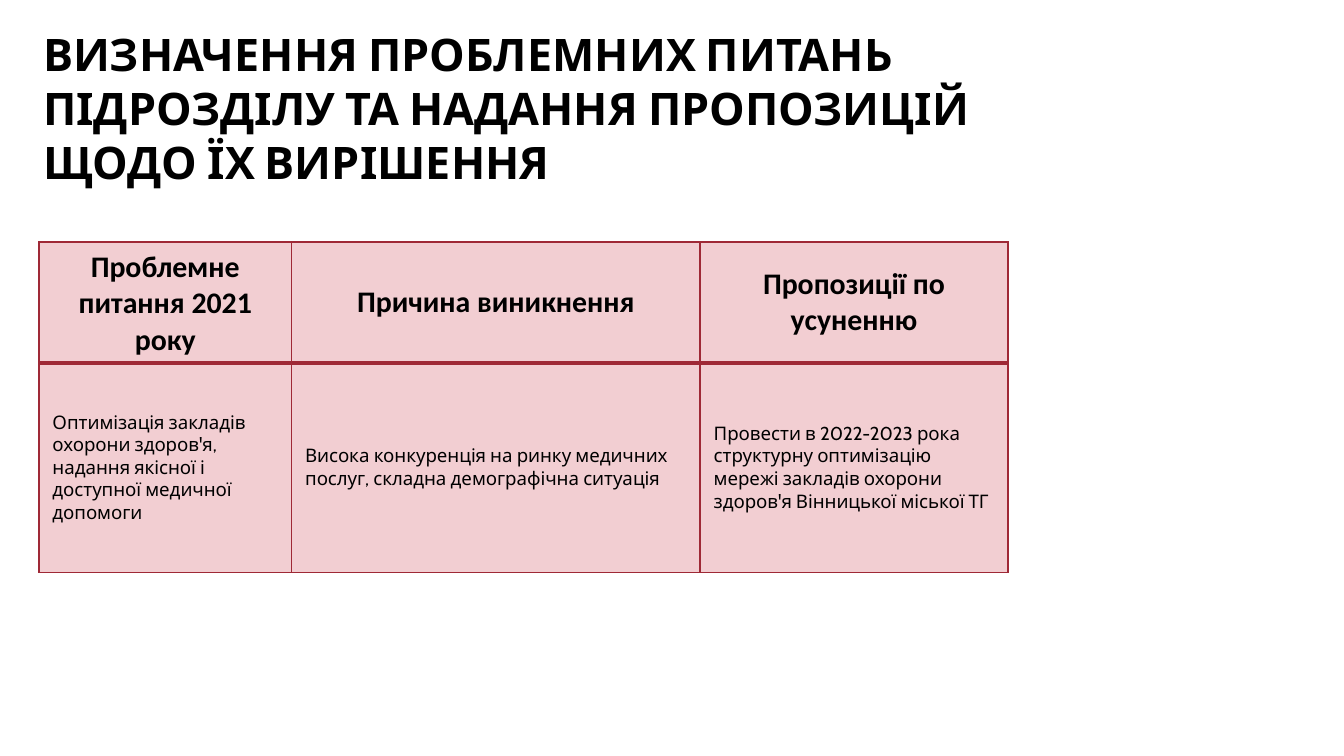
"""Build a slide with a table of a department's problems, causes and proposals."""
from lxml import etree
from pptx import Presentation
from pptx import util as u
from pptx.dml.color import RGBColor
from pptx.enum import text
from pptx.oxml.ns import qn

TITLE = "ВИЗНАЧЕННЯ ПРОБЛЕМНИХ ПИТАНЬ ПІДРОЗДІЛУ ТА НАДАННЯ ПРОПОЗИЦІЙ ЩОДО ЇХ ВИРІШЕННЯ"
ROWS = [
    ["Проблемне питання 2021 року", "Причина виникнення", "Пропозиції по усуненню"],
    [
        "Оптимізація закладів охорони здоров'я, надання якісної і доступної медичної допомоги",
        "Висока конкуренція на ринку медичних послуг, складна демографічна ситуація",
        "Провести в 2022-2023 рока структурну оптимізацію мережі закладів охорони "
        "здоров'я Вінницької міської ТГ",
    ],
]
COLORS = {"text": "000000", "fill": "F2CED2", "border": "9F2936"}
SLIDE_WIDTH = 10
SLIDE_HEIGHT = SLIDE_WIDTH * 9 / 16
TITLE_BOX = {"left": 0.22, "top": 0.15, "width": 7.35, "height": 1.31}
TABLE_LEFT, TABLE_TOP = 0.29, 1.8
COLUMN_WIDTHS = [1.88, 3.04, 2.29]
ROW_HEIGHTS = [0.9, 1.56]
TITLE_FONT = {"name": "Cabin", "size": u.Pt(24), "bold": True}
ROW_STYLES = [
    {
        "font": {"name": "Calibri", "size": u.Pt(16), "bold": True},
        "align": text.PP_ALIGN.CENTER,
        "borders": {"lnL": 1, "lnR": 1, "lnT": 1, "lnB": 2},
    },
    {
        "font": {"name": "Cabin", "size": u.Pt(10), "bold": False},
        "align": text.PP_ALIGN.LEFT,
        "borders": {"lnL": 1, "lnR": 1, "lnT": 2, "lnB": 1},
    },
]


def write(frame, words, font, align):
    """Put one formatted paragraph in a text frame."""
    para = frame.paragraphs[0]
    para.alignment = align
    span = para.add_run()
    span.text = words
    for name, value in font.items():
        setattr(span.font, name, value)
    span.font.color.rgb = RGBColor.from_string(COLORS["text"])


def set_borders(cell, borders):
    """Draw the cell's four borders ahead of its fill."""
    properties = cell._tc.get_or_add_tcPr()
    for index, (side, points) in enumerate(borders.items()):
        line = etree.Element(qn(f"a:{side}"), w=str(u.Pt(points)))
        fill = etree.SubElement(line, qn("a:solidFill"))
        etree.SubElement(fill, qn("a:srgbClr"), val=COLORS["border"])
        properties.insert(index, line)


def add_title(page):
    """Place and format the title."""
    box = page.shapes.title
    for name, value in TITLE_BOX.items():
        setattr(box, name, u.Inches(value))
    frame = box.text_frame
    frame.word_wrap = True
    frame.auto_size = text.MSO_AUTO_SIZE.SHAPE_TO_FIT_TEXT
    frame.vertical_anchor = text.MSO_ANCHOR.TOP
    write(frame, TITLE, TITLE_FONT, text.PP_ALIGN.LEFT)


def add_problem_table(page):
    """Add the table with its header and body rows."""
    area = [TABLE_LEFT, TABLE_TOP, sum(COLUMN_WIDTHS), sum(ROW_HEIGHTS)]
    table = page.shapes.add_table(len(ROWS), len(COLUMN_WIDTHS), *map(u.Inches, area)).table
    table.horz_banding = False
    for column, width in zip(table.columns, COLUMN_WIDTHS):
        column.width = u.Inches(width)
    for row, height, words, style in zip(table.rows, ROW_HEIGHTS, ROWS, ROW_STYLES):
        row.height = u.Inches(height)
        for cell, value in zip(row.cells, words):
            cell.vertical_anchor = text.MSO_ANCHOR.MIDDLE
            cell.fill.solid()
            cell.fill.fore_color.rgb = RGBColor.from_string(COLORS["fill"])
            set_borders(cell, style["borders"])
            write(cell.text_frame, value, style["font"], style["align"])


def main():
    """Build and save the deck."""
    deck = Presentation()
    deck.slide_width, deck.slide_height = u.Inches(SLIDE_WIDTH), u.Inches(SLIDE_HEIGHT)
    page = deck.slides.add_slide(deck.slide_layouts.get_by_name("Title Only"))
    add_title(page)
    add_problem_table(page)
    deck.save("out.pptx")


if __name__ == "__main__":
    main()
